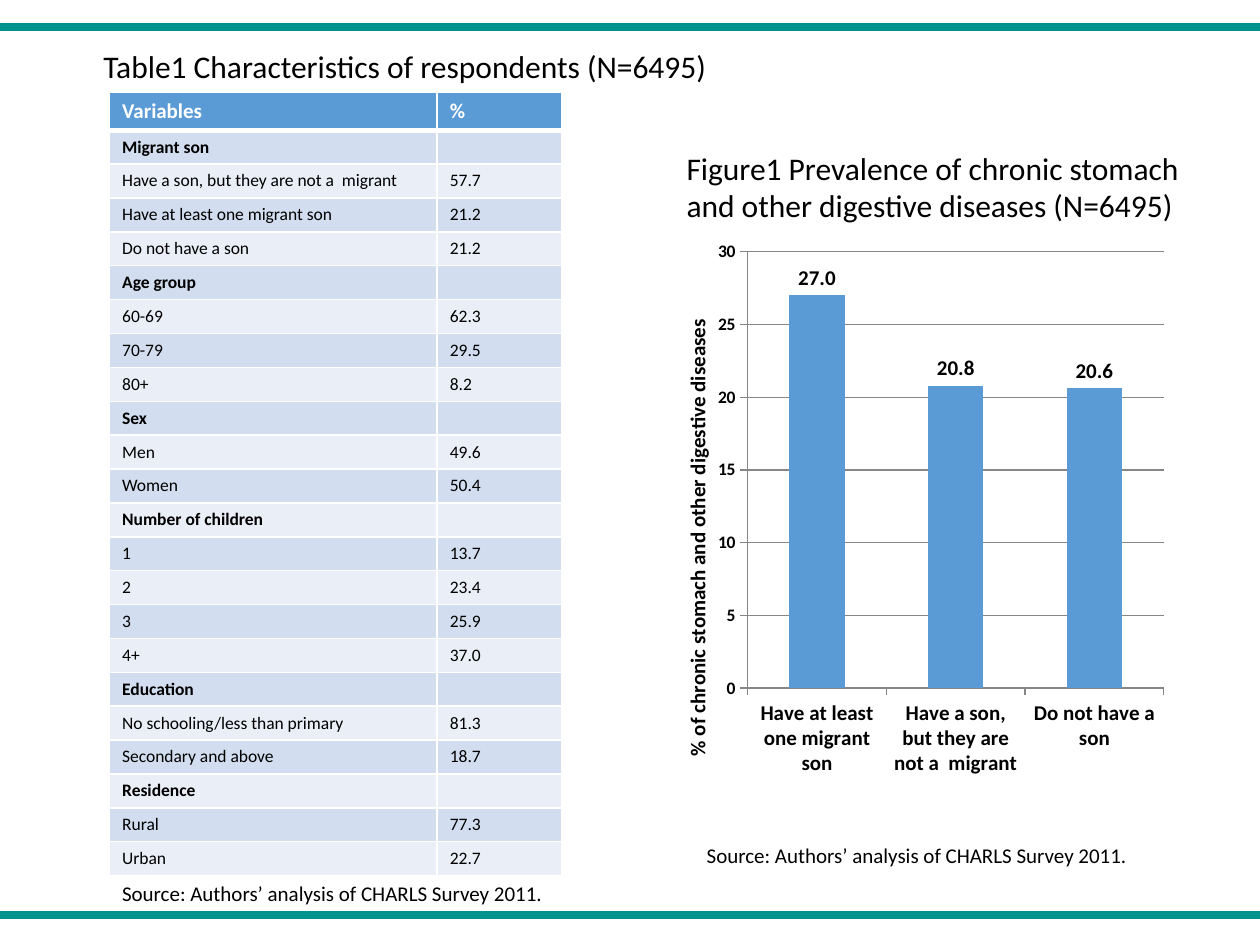
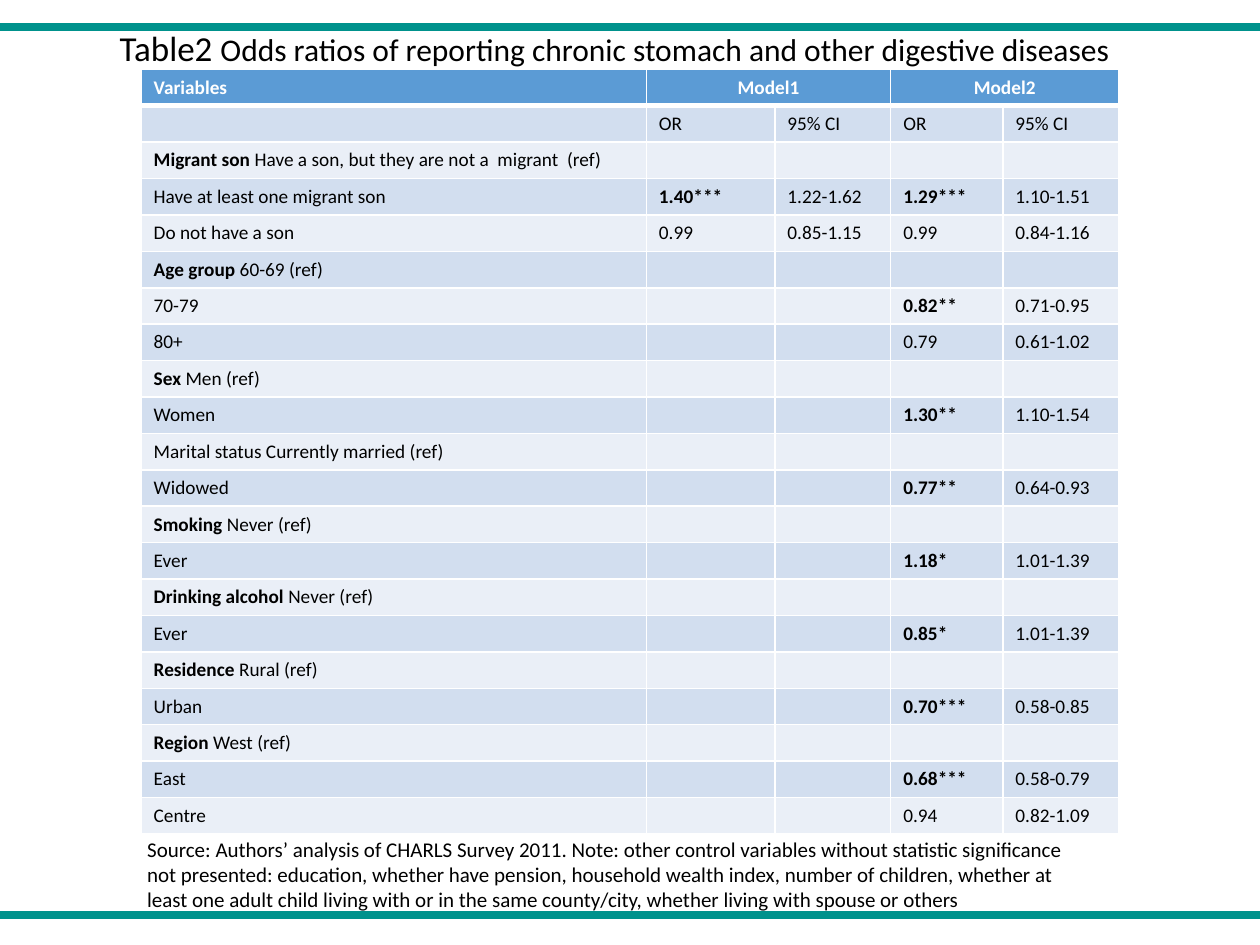
from dataclasses import dataclass

from lxml import etree
from pptx import Presentation
from pptx.chart.data import CategoryChartData
from pptx.dml.color import RGBColor
from pptx.enum.chart import XL_CHART_TYPE as Chart, XL_LABEL_POSITION as LabelPos
from pptx.enum.chart import XL_TICK_MARK as Tick
from pptx.enum.shapes import MSO_SHAPE as Shape
from pptx.enum.text import MSO_ANCHOR as Anchor, MSO_AUTO_SIZE as AutoSize, PP_ALIGN as Align
from pptx.oxml.ns import qn
from pptx.util import Inches, Pt

# Shared look
FONT = "Calibri"
BLACK, WHITE, TEAL, BLUE, GRAY = "000000", "FFFFFF", "00928C", "5B9BD5", "868686"
STRIPES = ("EAEFF7", "D2DEEF")
BAND_TOPS = (0.19, 7.24)
SOURCE = "Source: Authors’ analysis of CHARLS Survey 2011."


@dataclass
class Box:
    left: float
    top: float
    width: float
    height: float

    def inches(self) -> tuple:
        return tuple(Inches(v) for v in (self.left, self.top, self.width, self.height))


@dataclass
class TableSpec:
    box: Box
    widths: list[float]
    header_height: float
    row_height: float
    header_size: int
    body_size: int
    rows: list[list[str]]  # text before "|" is bold; so is any value with "*"


def rgb(value: str) -> RGBColor:
    return RGBColor.from_string(value)


def style_font(font, size: float, color: str = BLACK, bold: bool = False) -> None:
    font.name, font.size, font.bold = FONT, Pt(size), bold
    font.color.rgb = rgb(color)


def fill_text(s, box: Box, runs: list[tuple[str, int]]) -> None:
    s.left, s.top, s.width, s.height = box.inches()
    tf = s.text_frame
    tf.word_wrap, tf.auto_size, tf.vertical_anchor = True, AutoSize.NONE, Anchor.TOP
    p = tf.paragraphs[0]
    p.alignment = Align.LEFT
    for text, size in runs:
        r = p.add_run()
        r.text = text
        style_font(r.font, size)


def add_text(slide, box: Box, text: str, size: int) -> None:
    fill_text(slide.shapes.add_textbox(*box.inches()), box, [(text, size)])


def add_slide(prs, title_box: Box, title_runs: list[tuple[str, int]]):
    slide = prs.slides.add_slide(prs.slide_layouts[5])
    fill_text(slide.shapes.title, title_box, title_runs)
    for top in BAND_TOPS:
        s = slide.shapes.add_shape(Shape.RECTANGLE, *Box(0, top, 10, 0.05).inches())
        s.shadow.inherit = False
        s.fill.solid()
        s.fill.fore_color.rgb = s.line.color.rgb = rgb(TEAL)
        s.line.width = Pt(1)
    return slide


# Tables
def set_borders(cell, bottom: float) -> None:
    tc_pr = cell._tc.get_or_add_tcPr()
    widths = {"a:lnL": 1, "a:lnR": 1, "a:lnT": 1, "a:lnB": bottom}
    for i, (tag, width) in enumerate(widths.items()):
        ln = etree.Element(qn(tag), w=str(Pt(width)))
        solid = etree.SubElement(ln, qn("a:solidFill"))
        etree.SubElement(solid, qn("a:srgbClr"), val=WHITE)
        tc_pr.insert(i, ln)


def fill_cell(cell, text: str, size: int, is_header: bool, fill: str) -> None:
    cell.fill.solid()
    cell.fill.fore_color.rgb = rgb(fill)
    set_borders(cell, 3 if is_header else 1)
    p = cell.text_frame.paragraphs[0]
    if not text:
        etree.SubElement(p._p, qn("a:endParaRPr"), sz=str(size * 100))
        return
    lead, _, rest = text.partition("|")
    lead_bold = is_header or "|" in text or "*" in text
    for part, bold in ((lead, lead_bold), (rest, False)):
        if part:
            r = p.add_run()
            r.text = part
            style_font(r.font, size, WHITE if is_header else BLACK, bold)


def add_table(slide, spec: TableSpec):
    columns = len(spec.widths)
    table = slide.shapes.add_table(len(spec.rows), columns, *spec.box.inches()).table
    for column, width in zip(table.columns, spec.widths):
        column.width = Inches(width)
    for i, row in enumerate(spec.rows):
        is_header = i == 0
        table.rows[i].height = Inches(spec.header_height if is_header else spec.row_height)
        size = spec.header_size if is_header else spec.body_size
        fill = BLUE if is_header else STRIPES[i % 2]
        for j, text in enumerate(row + [""] * (columns - len(row))):
            fill_cell(table.cell(i, j), text, size, is_header, fill)
    return table


# Chart
def set_layout(parent, index: int, inner: bool = False, **fractions: float) -> None:
    for old in parent.findall(qn("c:layout")):
        parent.remove(old)
    layout = etree.Element(qn("c:layout"))
    manual = etree.SubElement(layout, qn("c:manualLayout"))
    if inner:
        etree.SubElement(manual, qn("c:layoutTarget"), val="inner")
    for mode in ("xMode", "yMode"):
        etree.SubElement(manual, qn("c:" + mode), val="edge")
    for name, value in fractions.items():
        etree.SubElement(manual, qn("c:" + name), val=str(value))
    parent.insert(index, layout)


def add_prevalence_chart(slide, box: Box) -> None:
    data = CategoryChartData()
    data.categories = ["Have at least one migrant son",
                       "Have a son, but they are not a  migrant", "Do not have a son"]
    data.add_series("Series 1", (27, 20.8, 20.6))
    chart = slide.shapes.add_chart(Chart.COLUMN_CLUSTERED, *box.inches(), data).chart
    style_font(chart.font, 10)
    chart.has_legend = chart.has_title = False

    plot = chart.plots[0]
    plot.gap_width, plot.vary_by_categories = 150, False
    bars = plot.series[0].format.fill
    bars.solid()
    bars.fore_color.rgb = rgb(BLUE)
    plot.has_data_labels = True
    labels = plot.data_labels
    labels.show_value, labels.position = True, LabelPos.OUTSIDE_END
    labels.number_format, labels.number_format_is_linked = "0.0", False
    style_font(labels.font, 12, bold=True)

    cat_axis, val_axis = chart.category_axis, chart.value_axis
    for axis, size in ((cat_axis, 12), (val_axis, 10)):
        axis.major_tick_mark, axis.minor_tick_mark = Tick.OUTSIDE, Tick.NONE
        axis.format.line.color.rgb = rgb(GRAY)
        style_font(axis.tick_labels.font, size, bold=True)
    val_axis.minimum_scale, val_axis.maximum_scale, val_axis.major_unit = 0, 30, 5
    val_axis.tick_labels.number_format = "0"
    val_axis.tick_labels.number_format_is_linked = False
    val_axis.has_major_gridlines = True
    val_axis.major_gridlines.format.line.color.rgb = rgb(GRAY)

    title = val_axis.axis_title
    title.text_frame.text = "% of chronic stomach and other digestive diseases"
    style_font(title.text_frame.paragraphs[0].runs[0].font, 12, bold=True)
    title.text_frame._txBody.bodyPr.set("rot", "-5400000")
    title.text_frame._txBody.bodyPr.set("vert", "horz")
    set_layout(title._element, 1, x=0.06, y=0.14)
    plot_area = chart._chartSpace.find(".//" + qn("c:plotArea"))
    set_layout(plot_area, 0, inner=True, x=0.19, y=0.035, w=0.79, h=0.72)


CHARACTERISTICS = TableSpec(
    Box(0.87, 0.73, 3.59, 6.17), [2.6, 0.99], 0.28, 0.25, 12, 10,
    [["Variables", "%"],
     ["Migrant son|"],
     ["Have a son, but they are not a  migrant", "57.7"],
     ["Have at least one migrant son", "21.2"],
     ["Do not have a son", "21.2"],
     ["Age group|"],
     ["60-69", "62.3"],
     ["70-79", "29.5"],
     ["80+", "8.2"],
     ["Sex|"],
     ["Men", "49.6"],
     ["Women", "50.4"],
     ["Number of children|"],
     ["1", "13.7"],
     ["2", "23.4"],
     ["3", "25.9"],
     ["4+", "37.0"],
     ["Education|"],
     ["No schooling/less than primary", "81.3"],
     ["Secondary and above", "18.7"],
     ["Residence|"],
     ["Rural", "77.3"],
     ["Urban", "22.7"]])

ODDS_RATIOS = TableSpec(
    Box(1.12, 0.55, 7.76, 5.95), [4.01, 1.02, 0.92, 0.89, 0.92], 0.27, 0.27, 11, 11,
    [["Variables", "Model1", "", "Model2"],
     ["", "OR", "95% CI", "OR", "95% CI"],
     ["Migrant son |Have a son, but they are not a  migrant  (ref)"],
     ["Have at least one migrant son", "1.40***", "1.22-1.62", "1.29***", "1.10-1.51"],
     ["Do not have a son", "0.99", "0.85-1.15", "0.99", "0.84-1.16"],
     ["Age group |60-69 (ref)"],
     ["70-79", "", "", "0.82**", "0.71-0.95"],
     ["80+", "", "", "0.79", "0.61-1.02"],
     ["Sex |Men (ref)"],
     ["Women", "", "", "1.30**", "1.10-1.54"],
     ["Marital status Currently married (ref)"],
     ["Widowed", "", "", "0.77**", "0.64-0.93"],
     ["Smoking |Never (ref)"],
     ["Ever", "", "", "1.18*", "1.01-1.39"],
     ["Drinking alcohol |Never (ref)"],
     ["Ever", "", "", "0.85*", "1.01-1.39"],
     ["Residence |Rural (ref)"],
     ["Urban", "", "", "0.70***", "0.58-0.85"],
     ["Region |West (ref)"],
     ["East", "", "", "0.68***", "0.58-0.79"],
     ["Centre", "", "", "0.94", "0.82-1.09"]])


def build_characteristics(prs) -> None:
    slide = add_slide(prs, Box(0.72, 0.32, 5.83, 0.71),
                      [("Table1 Characteristics of respondents (N=6495)", 18)])
    add_table(slide, CHARACTERISTICS)
    add_text(slide, Box(0.87, 6.94, 3.79, 0.3), SOURCE, 12)
    add_text(slide, Box(5.35, 1.13, 4.42, 0.71),
             "Figure1 Prevalence of chronic stomach and other digestive diseases (N=6495)", 18)
    add_text(slide, Box(5.51, 6.64, 3.65, 0.3), SOURCE, 12)
    add_prevalence_chart(slide, Box(5.14, 1.83, 4.18, 4.81))


def build_odds_ratios(prs) -> None:
    slide = add_slide(
        prs, Box(0.85, 0.16, 8.31, 0.44),
        [("Table2 ", 20),
         ("Odds ratios of reporting chronic stomach and other digestive diseases", 18)])
    table = add_table(slide, ODDS_RATIOS)
    for first in (1, 3):
        table.cell(0, first).merge(table.cell(0, first + 1))
        table.cell(0, first).text_frame.paragraphs[0].alignment = Align.CENTER
    add_text(slide, Box(1.07, 6.59, 7.67, 0.71),
             SOURCE + " Note: other control variables without statistic significance not "
             "presented: education, whether have pension, household wealth index, number of "
             "children, whether at least one adult child living with or in the same "
             "county/city, whether living with spouse or others", 12)


def main() -> None:
    prs = Presentation()
    prs.slide_width, prs.slide_height = Inches(10), Inches(7.5)
    build_characteristics(prs)
    build_odds_ratios(prs)
    prs.save("out.pptx")


if __name__ == "__main__":
    main()
